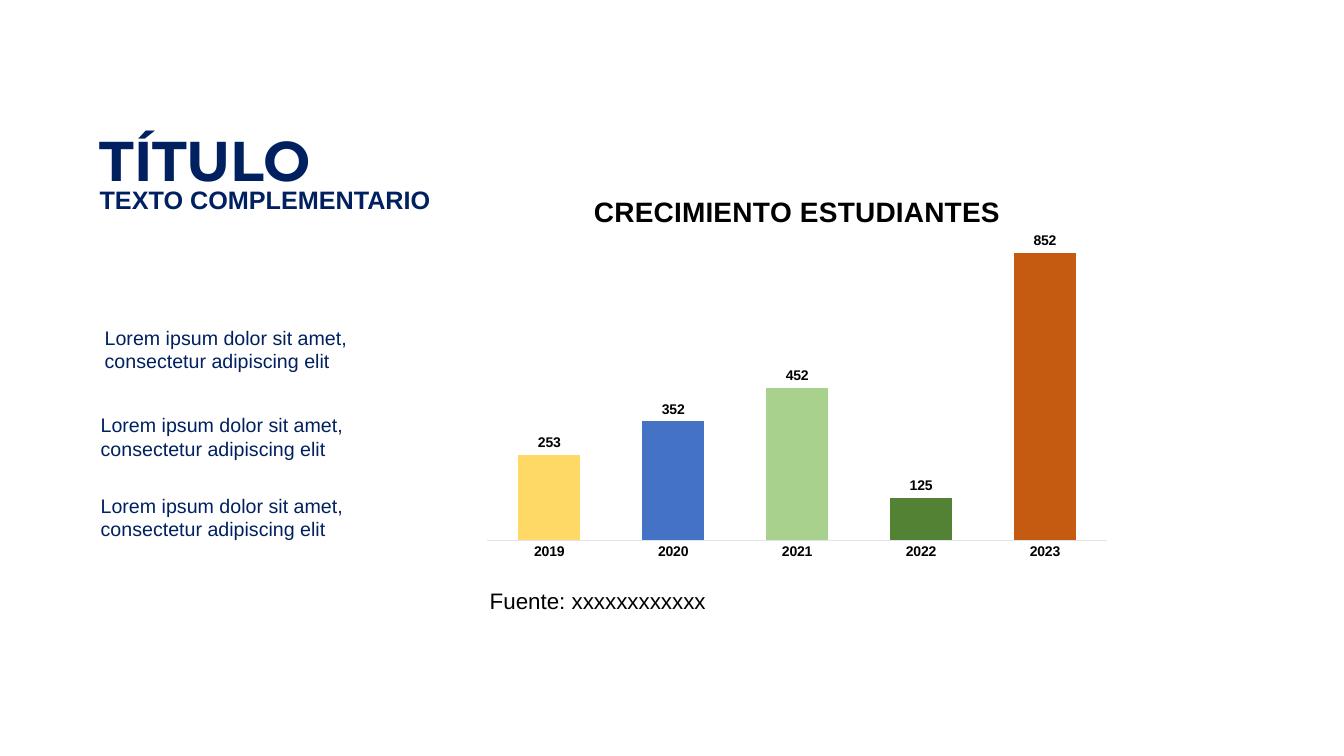
import pptx
import pptx.chart.data
import pptx.dml.color
import pptx.enum.chart
import pptx.enum.text
import pptx.oxml
import pptx.oxml.ns
import pptx.util
from pptx.util import Pt

# Content
COLORS = {
    "navy": "002060", "black": "000000", "axis": "E0E5EB",
    "yellow": "FFD966", "blue": "4472C4", "light green": "A9D18E",
    "green": "548235", "orange": "C55A11",
}
TITLE = "TÍTULO"
LOREM = "Lorem ipsum dolor sit amet, consectetur adipiscing elit"
# text, (left, top, width, height), size, bold, color, wrap
TEXTS = [
    ("Fuente: xxxxxxxxxxxx", (342.7, 416, 342, 27), 16, False, "black", True),
    ("TEXTO COMPLEMENTARIO", (64.1, 128.2, 253.4, 29), 18, True, "navy", False),
    (LOREM, (67.7, 229, 193, 41), 14, False, "navy", True),
    (LOREM, (64.8, 291.6, 193, 41), 14, False, "navy", True),
    (LOREM, (64.8, 349.2, 193, 41), 14, False, "navy", True),
]
TITLE_PLACE = (64.1, 86.4, 182, 55.5)
CHART_TITLE = "CRECIMIENTO ESTUDIANTES"
CHART_PLACE = (337, 121, 464.4, 283.7)
STUDENTS = [
    ("2019", 253, "yellow"), ("2020", 352, "blue"), ("2021", 452, "light green"),
    ("2022", 125, "green"), ("2023", 852, "orange"),
]


def rgb(name):
    return pptx.dml.color.RGBColor.from_string(COLORS[name])


def style_font(font, size, bold, color, face="Arial"):
    font.name, font.size, font.bold = face, Pt(size), bold
    font.color.rgb = rgb(color)


def place(shape, rect):
    shape.left, shape.top, shape.width, shape.height = map(Pt, rect)


def write(box, text, size, bold, color, wrap, face="Arial"):
    frame = box.text_frame
    frame.word_wrap = wrap
    frame.auto_size = pptx.enum.text.MSO_AUTO_SIZE.SHAPE_TO_FIT_TEXT
    frame.vertical_anchor = pptx.enum.text.MSO_ANCHOR.TOP
    para = frame.paragraphs[0]
    para.alignment = pptx.enum.text.PP_ALIGN.LEFT
    span = para.add_run()
    span.text = text
    style_font(span.font, size, bold, color, face)


def set_layout(parent, index, **settings):
    """Give a chart part a manual layout."""
    for old in parent.findall(pptx.oxml.ns.qn("c:layout")):
        parent.remove(old)
    items = "".join(f'<c:{tag} val="{value}"/>' for tag, value in settings.items())
    parent.insert(index, pptx.oxml.parse_xml(
        f'<c:layout {pptx.oxml.ns.nsdecls("c")}>'
        f"<c:manualLayout>{items}</c:manualLayout></c:layout>"))


deck = pptx.Presentation()
deck.slide_width, deck.slide_height = Pt(960), Pt(540)
page = deck.slides.add_slide(deck.slide_layouts[5])

# Title and texts
place(page.shapes.title, TITLE_PLACE)
write(page.shapes.title, TITLE, 40, True, "navy", False, "Montserrat")
for text, rect, size, bold, color, wrap in TEXTS:
    box = page.shapes.add_textbox(*map(Pt, rect))
    write(box, text, size, bold, color, wrap)

# Chart
data = pptx.chart.data.CategoryChartData()
data.categories = [year for year, _, _ in STUDENTS]
data.add_series("Series 1", [count for _, count, _ in STUDENTS])
chart = page.shapes.add_chart(
    pptx.enum.chart.XL_CHART_TYPE.COLUMN_CLUSTERED, *map(Pt, CHART_PLACE), data).chart
style_font(chart.font, 10, False, "black")
chart.has_legend = False

# Chart title
chart.has_title = True
heading = chart.chart_title
span = heading.text_frame.paragraphs[0].add_run()
span.text = CHART_TITLE
style_font(span.font, 20, True, "black")
heading.include_in_layout = False
set_layout(heading._element, 1, xMode="edge", yMode="edge", x=0.18, y=0.05)

# Bars and their labels
plot = chart.plots[0]
plot.gap_width, plot.overlap, plot.vary_by_categories = 100, -24, False
series = plot.series[0]
series.format.fill.solid()
series.format.fill.fore_color.rgb = rgb(STUDENTS[0][2])
for index, (_, _, color) in enumerate(STUDENTS):
    fill = series.points[index].format.fill
    fill.solid()
    fill.fore_color.rgb = rgb(color)
labels = series.data_labels
labels.show_value = True
labels.position = pptx.enum.chart.XL_LABEL_POSITION.OUTSIDE_END
style_font(labels.font, 10, True, "black")

# Axes and plot area
years = chart.category_axis
years.major_tick_mark = pptx.enum.chart.XL_TICK_MARK.NONE
years.format.line.color.rgb = rgb("axis")
years.format.line.width = Pt(0.75)
style_font(years.tick_labels.font, 10, True, "black")
counts = chart.value_axis
counts.minimum_scale, counts.maximum_scale = 0, 900
counts.has_major_gridlines = False
counts.visible = False
plot_area = chart._chartSpace.chart.plotArea
set_layout(plot_area, 0, layoutTarget="inner", xMode="edge", yMode="edge",
           x=0.024, y=0.169, w=0.953, h=0.765)

deck.save("out.pptx")
